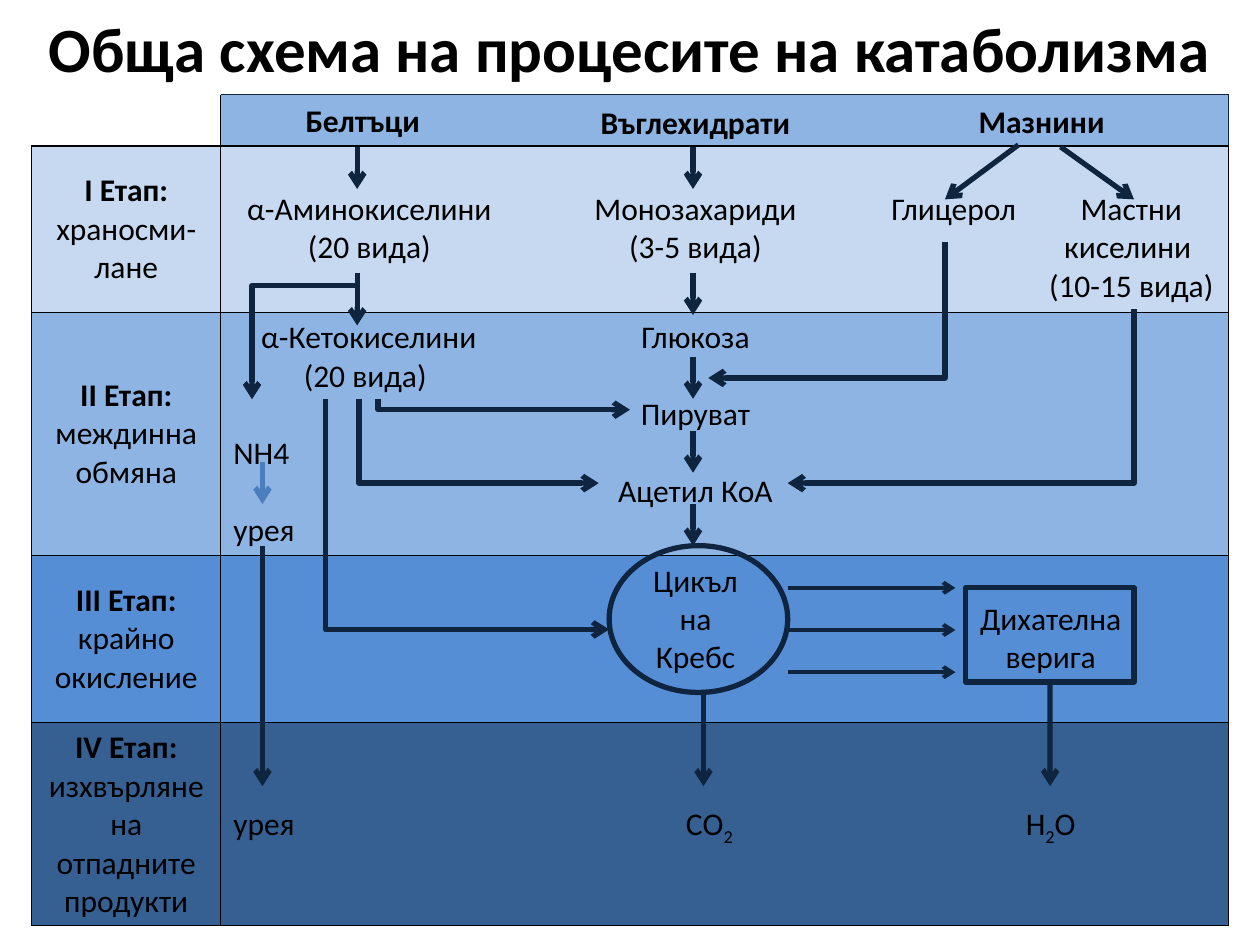
from lxml import etree
from pptx import Presentation
from pptx.dml.color import RGBColor
from pptx.enum.shapes import MSO_CONNECTOR, MSO_SHAPE
from pptx.enum.text import MSO_ANCHOR, PP_ALIGN
from pptx.oxml.ns import qn
from pptx.util import Cm, Pt

STRAIGHT, ELBOW = MSO_CONNECTOR.STRAIGHT, MSO_CONNECTOR.ELBOW
OVAL, RECTANGLE = MSO_SHAPE.OVAL, MSO_SHAPE.RECTANGLE
CENTER, LEFT = PP_ALIGN.CENTER, PP_ALIGN.LEFT
MIDDLE, TOP = MSO_ANCHOR.MIDDLE, MSO_ANCHOR.TOP
BOTTOM_SIDE = 2
NAVY, STEEL, BLACK = "0F243E", "4B7EBC", "000000"
LINE_HEIGHT = 0.77
EDGES = {"left": "a:lnL", "right": "a:lnR", "top": "a:lnT", "bottom": "a:lnB"}


def color(value):
    return RGBColor.from_string(value)


def apply(target, values):
    for name, value in values.items():
        setattr(target, name, value)


class Diagram:
    font = {"name": "Calibri", "size": Pt(18), "bold": False}

    def __init__(self, slide):
        self.slide = slide
        self.shapes = slide.shapes

    def span(self, para, text, baseline=0, **style):
        span = para.add_run()
        span.text = text
        apply(span.font, {**self.font, **style})
        span.font.color.rgb = color(BLACK)
        if baseline:
            span.font._element.set("baseline", str(baseline))

    def para(self, frame, spans, first, indent=0, **layout):
        para = frame.paragraphs[0] if first else frame.add_paragraph()
        apply(para, layout)
        if indent:
            para._p.get_or_add_pPr().set("marL", str(Cm(indent)))
        for text, style in spans:
            self.span(para, text, **style)

    def label(self, text, place, align=LEFT, anchor=TOP, **style):
        box = self.shapes.add_textbox(*map(Cm, place))
        apply(box.text_frame, {"word_wrap": True, "vertical_anchor": anchor})
        self.para(box.text_frame, [(text, {"bold": True, **style})], True, alignment=align)

    def table(self, place, widths, heights):
        table = self.shapes.add_table(
            len(heights), len(widths), *map(Cm, place), Cm(sum(widths)), Cm(sum(heights))
        ).table
        apply(table, {"first_row": False, "horz_banding": False})
        for column, width in zip(table.columns, widths):
            column.width = Cm(width)
        for row, height in zip(table.rows, heights):
            row.height = Cm(height)
        return table

    def cell(self, cell, fill, edges):
        properties = cell._tc.get_or_add_tcPr()
        for edge, tag in EDGES.items():
            border = etree.SubElement(properties, qn(tag), w=str(Pt(1)))
            if edge in edges:
                paint = etree.SubElement(border, qn("a:solidFill"))
                etree.SubElement(paint, qn("a:srgbClr"), val=BLACK)
            else:
                etree.SubElement(border, qn("a:noFill"))
        if fill:
            cell.fill.solid()
            cell.fill.fore_color.rgb = color(fill)
        else:
            cell.fill.background()

    def cell_text(self, cell, paras, lead=0, anchor=TOP):
        apply(cell, {"vertical_anchor": anchor, "margin_top": Cm(0.13 + lead * LINE_HEIGHT)})
        for index, (spans, layout) in enumerate(paras):
            self.para(cell.text_frame, spans, index == 0, **{"alignment": CENTER, **layout})

    def outline(self, kind, place):
        shape = self.shapes.add_shape(kind, *map(Cm, place))
        shape.shadow.inherit = False
        shape.fill.background()
        shape.line.color.rgb = color(NAVY)
        shape.line.width = Pt(3)
        return shape

    def line(self, start, end, kind=STRAIGHT, width=3, ink=NAVY, arrow=True):
        line = self.shapes.add_connector(kind, *map(Cm, start + end))
        line.line.color.rgb = color(ink)
        line.line.width = Pt(width)
        properties = line._element.spPr
        if arrow:
            etree.SubElement(properties.find(qn("a:ln")), qn("a:tailEnd"), type="arrow")
        etree.SubElement(properties, qn("a:effectLst"))
        return line

    def elbow(self, start, end, bend=0, turn=0):
        properties = self.line(start, end, ELBOW)._element.spPr
        properties.find(qn("a:xfrm")).set("rot", str(turn * 60000))
        guides = properties.find(qn("a:prstGeom")).get_or_add_avLst()
        etree.SubElement(guides, qn("a:gd"), name="adj1", fmla=f"val {bend}")


def plain(*texts):
    return [([(text, {})], {}) for text in texts]


def formula(before, after="", **layout):
    return [([(before, {}), ("2", {"baseline": -25000}), (after, {})], layout)]


def main():
    deck = Presentation()
    apply(deck, {"slide_width": Cm(25.4), "slide_height": Cm(19.05)})
    diagram = Diagram(deck.slides.add_slide(deck.slide_layouts[6]))
    diagram.label("Обща схема на процесите на катаболизма", (-1.7, -0.64, 28.78, 3.18),
                  CENTER, MIDDLE, size=Pt(36))

    table = diagram.table((0.64, 1.91), (3.81, 5.99, 7.16, 3.25, 3.91),
                          (1.03, 3.36, 4.9, 3.36, 4.1))
    row_fills = ("8EB4E3", "C6D9F1", "8EB4E3", "558ED5", "376092")
    merge_starts = {0: 1, 2: 3, 3: 3, 4: 3}
    for row, fill in enumerate(row_fills):
        for column in range(5):
            edges = {"bottom"} | ({"top"} if row else set())
            if column == 0:
                edges |= {"right"} | ({"left"} if row else set())
            if column == 1:
                edges.add("left")
            if column in (4, merge_starts.get(row)):
                edges.add("right")
            corner = row == column == 0
            diagram.cell(table.cell(row, column), None if corner else fill, edges)
    for row, first in merge_starts.items():
        table.cell(row, first).merge(table.cell(row, 4))

    stages = (("I", "храносми-лане"), ("II", "междинна обмяна"),
              ("III", "крайно окисление"), ("IV", "изхвърляне на отпадните продукти"))
    for row, (number, name) in enumerate(stages, 1):
        heading = [(f"{number} Етап: ", {"bold": True}), (name, {})]
        diagram.cell_text(table.cell(row, 0), [(heading, {})], anchor=MIDDLE)

    gap = {"space_before": Pt(22)}
    keto = [([(text, {})], {"alignment": LEFT, **layout}) for text, layout in (
        ("α-Кетокиселини", {"indent": 0.56}), ("(20 вида)", {"indent": 1.42}),
        ("NH4", gap), ("урея", gap))]
    glucose = [([(text, {})], layout) for text, layout in (
        ("Глюкоза", {}), ("Пируват", gap), ("Ацетил КоА", gap))]
    contents = (
        (1, 1, plain("α-Аминокиселини", "(20 вида)"), 1),
        (1, 2, plain("Монозахариди", "(3-5 вида)"), 1),
        (1, 3, plain("Глицерол"), 1),
        (1, 4, plain("Мастни", "киселини ", "(10-15 вида)"), 1),
        (2, 1, keto, 0),
        (2, 2, glucose, 0),
        (3, 2, plain("Цикъл", "на", "Кребс"), 0),
        (3, 3, plain("Дихателна", "верига"), 1),
        (4, 1, [([("урея", {})], {"alignment": LEFT})], 2),
        (4, 2, formula("СО", indent=0.56), 2),
        (4, 3, formula("Н", "О"), 2),
    )
    for row, column, paras, lead in contents:
        diagram.cell_text(table.cell(row, column), paras, lead)

    for text, place in (("Белтъци", (5.91, 1.91, 3.39, 1.02)),
                        ("Въглехидрати", (11.86, 1.96, 4.87, 1.02)),
                        ("Мазнини", (19.48, 1.93, 3.81, 1.02))):
        diagram.label(text, place)

    diagram.outline(OVAL, (12.28, 11, 3.6, 2.96))
    chain = diagram.outline(RECTANGLE, (19.47, 11.85, 3.39, 1.9))

    drops = ((7.2, 2.96, 3.81), (7.2, 5.5, 6.56), (13.97, 2.96, 3.81),
             (13.97, 5.5, 6.35), (13.97, 7.2, 8.04), (13.97, 8.68, 9.53),
             (13.97, 10.16, 11), (14.18, 13.97, 15.85), (5.29, 11, 15.85))
    for x, top, bottom in drops:
        diagram.line((x, top), (x, bottom))
    diagram.line((5.29, 9.31), (5.29, 10.16), ink=STEEL)
    diagram.line((20.53, 2.92), (19.05, 4.02))
    diagram.line((21.38, 2.96), (22.86, 4.02))
    water = diagram.line((21.17, 13.75), (21.17, 15.85))
    water.begin_connect(chain, BOTTOM_SIDE)
    for step in range(3):
        y = 11.85 + step * 0.85
        diagram.line((15.88, y), (19.26, y), width=2.25)

    diagram.elbow((5.08, 5.93), (7.2, 8.05), bend=-8200, turn=90)
    for start, end in (((7.62, 8.04), (12.7, 8.26)), ((7.24, 8.04), (12.07, 9.74)),
                       ((6.56, 8.04), (12.28, 12.69)), ((19.05, 4.87), (14.28, 7.62)),
                       ((22.86, 6.24), (15.88, 9.74))):
        diagram.elbow(start, end)

    for start, end in (((4.45, 1.91), (24.77, 1.91)), ((24.77, 1.91), (24.77, 2.92))):
        diagram.line(start, end, width=0.75, arrow=False)
    deck.save("out.pptx")


if __name__ == "__main__":
    main()
